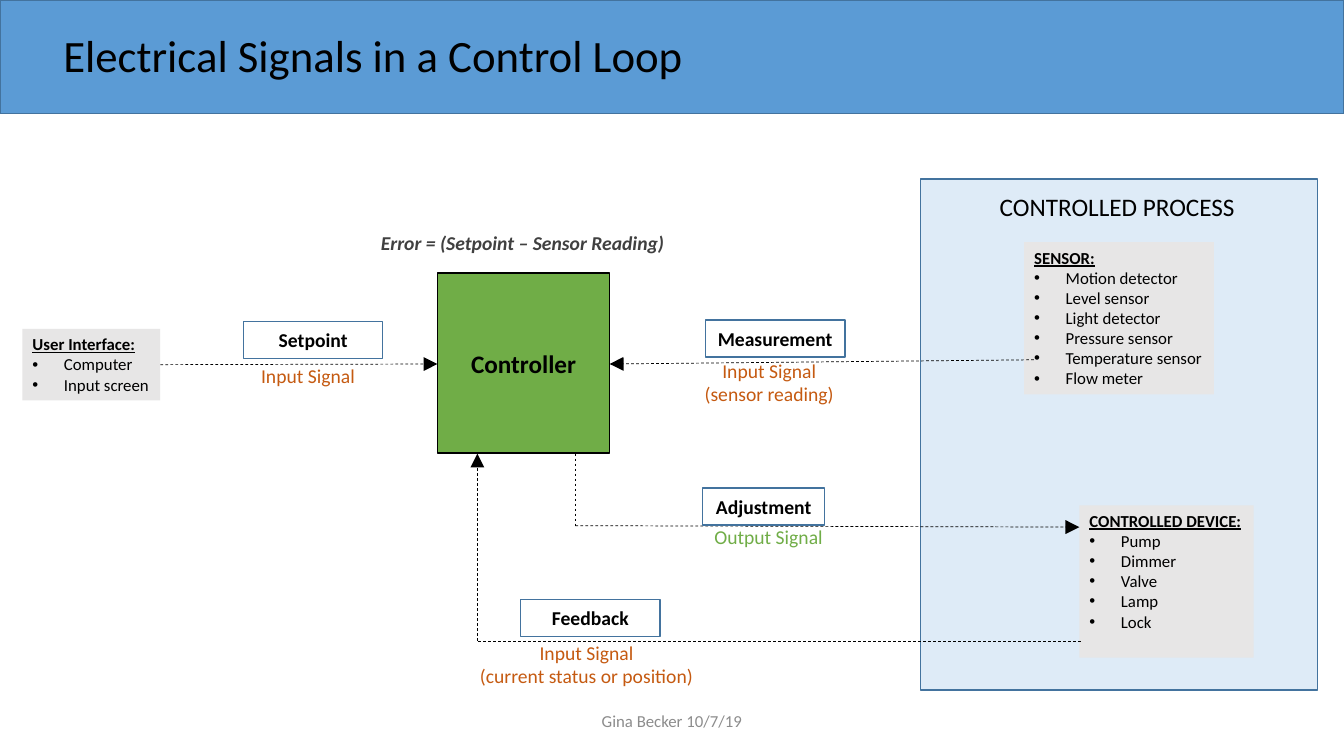
from dataclasses import dataclass
from itertools import pairwise
from typing import Any

import pptx
import pptx.dml.color
import pptx.enum.dml
import pptx.enum.shapes
import pptx.enum.text
import pptx.oxml
import pptx.oxml.ns
import pptx.util

Pt = pptx.util.Pt
qn = pptx.oxml.ns.qn
ANCHOR = pptx.enum.text.MSO_ANCHOR
ALIGN = pptx.enum.text.PP_ALIGN
FONT = "Calibri"
BLACK, BLUE_LINE, ORANGE, GREEN = "000000", "43739E", "C55A11", "70AD47"
Box = tuple[float, float, float, float]
Point = tuple[float, float]


@dataclass
class Block:
    box: Box
    fill: str
    line: str
    text: str = ""
    size: float = 14


@dataclass
class Caption:
    box: Box
    lines: list[str]
    color: str
    size: float = 14
    align: Any = ALIGN.CENTER
    emphasis: bool = False
    wrap: bool = False
    anchor: Any = ANCHOR.TOP


@dataclass
class Card:
    idx: int
    box: Box
    heading: str
    items: list[str]


def rgb(color: str) -> pptx.dml.color.RGBColor:
    return pptx.dml.color.RGBColor.from_string(color)


def place(sp: Any, box: Box) -> None:
    sp.left, sp.top, sp.width, sp.height = map(Pt, box)


def add_run(p: Any, text: str, size: float, color: str = BLACK, bold: bool = False,
            italic: bool = False, underline: bool = False) -> None:
    r = p.add_run()
    r.text = text
    f = r.font
    f.name, f.size, f.bold, f.italic, f.underline = FONT, Pt(size), bold, italic, underline
    f.color.rgb = rgb(color)


def paragraph(tf: Any, i: int) -> Any:
    return tf.paragraphs[0] if i == 0 else tf.add_paragraph()


def add_block(s: Any, b: Block) -> None:
    sp = s.shapes.add_shape(pptx.enum.shapes.MSO_SHAPE.RECTANGLE, *map(Pt, b.box))
    sp.shadow.inherit = False
    sp.fill.solid()
    sp.fill.fore_color.rgb = rgb(b.fill)
    sp.line.color.rgb = rgb(b.line)
    sp.line.width = Pt(1)
    if b.text:
        tf = sp.text_frame
        tf.word_wrap = True
        tf.vertical_anchor = ANCHOR.MIDDLE
        p = tf.paragraphs[0]
        p.alignment = ALIGN.CENTER
        add_run(p, b.text, b.size, bold=True)


def add_caption(s: Any, c: Caption) -> None:
    tf = s.shapes.add_textbox(*map(Pt, c.box)).text_frame
    tf.word_wrap = c.wrap
    tf.vertical_anchor = c.anchor
    for i, text in enumerate(c.lines):
        p = paragraph(tf, i)
        p.alignment = c.align
        add_run(p, text, c.size, c.color, bold=c.emphasis, italic=c.emphasis)


def fill_title(s: Any, text: str, box: Box) -> None:
    sp = s.shapes.title
    s.shapes._spTree.append(sp._element)
    place(sp, box)
    tf = sp.text_frame
    tf.word_wrap = False
    tf.auto_size = pptx.enum.text.MSO_AUTO_SIZE.NONE
    tf.vertical_anchor = ANCHOR.TOP
    p = tf.paragraphs[0]
    p.alignment = ALIGN.LEFT
    add_run(p, text, 32)


def fill_card(s: Any, card: Card) -> None:
    sp = s.placeholders[card.idx]
    s.shapes._spTree.append(sp._element)
    place(sp, card.box)
    sp.fill.solid()
    sp.fill.fore_color.rgb = rgb("E7E6E6")
    tf = sp.text_frame
    tf.word_wrap = False
    tf.auto_size = pptx.enum.text.MSO_AUTO_SIZE.NONE
    tf.vertical_anchor = ANCHOR.TOP
    for i, text in enumerate([card.heading, *card.items]):
        p = paragraph(tf, i)
        is_item = i > 0
        pPr = p._p.get_or_add_pPr()
        indent = Pt(22.5) if is_item else 0
        pPr.set("marL", str(indent))
        pPr.set("indent", str(-indent))
        if is_item:
            pptx.oxml.ns.qn
            font = pPr.makeelement(qn("a:buFont"), {"typeface": "Arial"})
            bullet = pPr.makeelement(qn("a:buChar"), {"char": "•"})
            pPr.extend([font, bullet])
        else:
            pPr.append(pPr.makeelement(qn("a:buNone"), {}))
        p.alignment = ALIGN.LEFT
        p.line_spacing = 1.0
        p.space_before = p.space_after = Pt(0)
        add_run(p, text, 12, bold=not is_item, underline=not is_item)


def add_signal(s: Any, points: list[Point]) -> None:
    for start, end in pairwise(points):
        cx = s.shapes.add_connector(pptx.enum.shapes.MSO_CONNECTOR.STRAIGHT,
                                    *map(Pt, (*start, *end)))
        cx.line.color.rgb = rgb(BLACK)
        cx.line.width = Pt(0.5)
        cx.line.dash_style = pptx.enum.dml.MSO_LINE.DASH
        if end == points[-1]:
            ln = cx.line._get_or_add_ln()
            ln.append(ln.makeelement(qn("a:tailEnd"), {"type": "triangle", "w": "lg", "len": "lg"}))
        spPr = cx._element.spPr
        spPr.append(spPr.makeelement(qn("a:effectLst"), {}))


BACKDROPS = [
    Block((0, 0, 960, 81), "5B9BD5", BLUE_LINE),
    Block((657.5, 128, 283.5, 365), "DEEBF7", BLUE_LINE),
    Block((312.5, 195, 123, 128.5), GREEN, BLACK, "Controller", 18),
]
CARDS = [
    Card(1, (731.5, 173, 135.5, 108.7), "SENSOR:",
         ["Motion detector", "Level sensor", "Light detector", "Pressure sensor",
          "Temperature sensor", "Flow meter"]),
    Card(2, (771, 361, 124.5, 108.7), "CONTROLLED DEVICE:",
         ["Pump", "Dimmer", "Valve", "Lamp", "Lock"]),
    Card(3, (16, 235, 98.5, 51), "User Interface:", ["Computer", "Input screen"]),
]
SIGNALS = [
    [(114.5, 260.5), (312.5, 260)],
    [(738.5, 257), (435.5, 260)],
    [(411, 324), (411, 375.5), (771, 376.5)],
    [(772, 458), (341, 458), (341, 324)],
]
LABELS = [
    Block((left, top, width, 26.5), "FFFFFF", BLUE_LINE, text)
    for left, top, width, text in [
        (502, 348.5, 87, "Adjustment"), (504, 228.5, 99.5, "Measurement"),
        (372, 428, 99.5, "Feedback"), (174, 229.5, 99.5, "Setpoint")]
]
CAPTIONS = [
    Caption((495.5, 252.5, 108, 41), ["Input Signal", "(sensor reading)"], ORANGE),
    Caption((318, 454, 202, 41), ["Input Signal", "(current status or position)"], ORANGE, wrap=True),
    Caption((502.5, 371.5, 93, 41), ["Output Signal"], GREEN),
    Caption((179, 256.5, 82, 24.5), ["Input Signal"], ORANGE),
    Caption((265, 161.5, 218, 24.5), ["Error = (Setpoint – Sensor Reading)"], "404040",
            align=ALIGN.LEFT, emphasis=True),
    Caption((707, 133, 184, 29), ["CONTROLLED PROCESS"], BLACK, 18, ALIGN.LEFT),
    Caption((318, 500.5, 324, 29), ["Gina Becker 10/7/19"], "8C8C8C", 12,
            wrap=True, anchor=ANCHOR.MIDDLE),
]


def main() -> None:
    prs = pptx.Presentation()
    prs.slide_width, prs.slide_height = Pt(960), Pt(540)
    s = prs.slides.add_slide(prs.slide_layouts.get_by_name("Comparison"))
    unused = s.placeholders[4]._element
    unused.getparent().remove(unused)
    for block in BACKDROPS:
        add_block(s, block)
    fill_title(s, "Electrical Signals in a Control Loop", (38, 16, 462, 46))
    for card in CARDS:
        fill_card(s, card)
    for points in SIGNALS:
        add_signal(s, points)
    for caption in CAPTIONS:
        add_caption(s, caption)
    for label in LABELS:
        add_block(s, label)
    prs.save("out.pptx")


if __name__ == "__main__":
    main()
